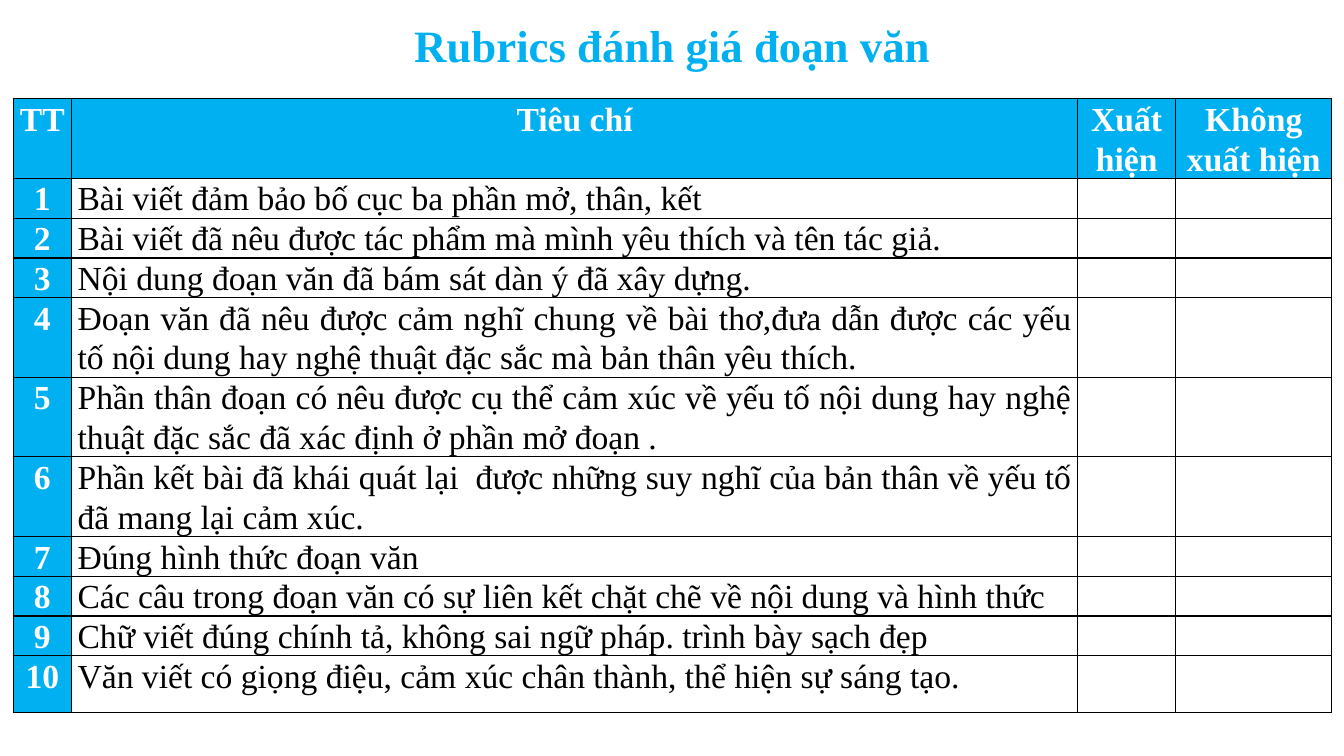
import lxml.etree
import pptx
import pptx.dml.color
import pptx.enum.text
import pptx.oxml.ns
import pptx.util

PX = 9144
THEME = {
    "font": "Times New Roman",
    "accent": "00B0F0",
    "light": "FFFFFF",
    "dark": "000000",
    "title_size": 32,
    "table_size": 24,
}
ALIGN = pptx.enum.text.PP_ALIGN


def style_paragraph(paragraph, size, color, bold):
    font = paragraph.font
    font.name = THEME["font"]
    font.size = pptx.util.Pt(size)
    font.bold = bold
    font.color.rgb = pptx.dml.color.RGBColor.from_string(THEME[color])


def add_borders(cell):
    properties = cell._tc.get_or_add_tcPr()
    for position, side in enumerate(("lnL", "lnR", "lnT", "lnB")):
        border = lxml.etree.Element(
            pptx.oxml.ns.qn("a:" + side), w=str(pptx.util.Pt(1))
        )
        fill = lxml.etree.SubElement(border, pptx.oxml.ns.qn("a:solidFill"))
        lxml.etree.SubElement(fill, pptx.oxml.ns.qn("a:srgbClr"), val=THEME["dark"])
        properties.insert(position, border)


HEADINGS = ["TT", "Tiêu chí", "Xuất hiện", "Không xuất hiện"]
CRITERIA = [
    "Bài viết đảm bảo bố cục ba phần mở, thân, kết",
    "Bài viết đã nêu được tác phẩm mà mình yêu thích và tên tác giả.",
    "Nội dung đoạn văn đã bám sát dàn ý đã xây dựng.",
    "Đoạn văn đã nêu được cảm nghĩ chung về bài thơ,đưa dẫn được các yếu tố nội dung hay nghệ thuật đặc sắc mà bản thân yêu thích.",
    "Phần thân đoạn có nêu được cụ thể cảm xúc về yếu tố nội dung hay nghệ thuật đặc sắc đã xác định ở phần mở đoạn .",
    "Phần kết bài đã khái quát lại  được những suy nghĩ của bản thân về yếu tố đã mang lại cảm xúc.",
    "Đúng hình thức đoạn văn",
    "Các câu trong đoạn văn có sự liên kết chặt chẽ về nội dung và hình thức",
    "Chữ viết đúng chính tả, không sai ngữ pháp. trình bày sạch đẹp",
    "Văn viết có giọng điệu, cảm xúc chân thành, thể hiện sự sáng tạo.",
]
COLUMN_WIDTHS = [58, 998, 97, 155]
ROW_HEIGHTS = [79] + [38] * 3 + [79] * 3 + [38] * 3 + [56]

deck = pptx.Presentation()
deck.slide_width = 1333 * PX
deck.slide_height = 750 * PX
slide = deck.slides.add_slide(deck.slide_layouts[6])

rubric = slide.shapes.add_table(
    len(ROW_HEIGHTS),
    len(COLUMN_WIDTHS),
    13 * PX,
    98 * PX,
    sum(COLUMN_WIDTHS) * PX,
    sum(ROW_HEIGHTS) * PX,
).table
rubric.first_row = False
rubric.horz_banding = False
for column, width in zip(rubric.columns, COLUMN_WIDTHS):
    column.width = width * PX
for row, height in zip(rubric.rows, ROW_HEIGHTS):
    row.height = height * PX

entries = [HEADINGS]
for number, criterion in enumerate(CRITERIA, 1):
    entries.append([str(number), criterion, "", ""])

for row_index, entry in enumerate(entries):
    for column_index, wording in enumerate(entry):
        cell = rubric.cell(row_index, column_index)
        cell.margin_left = cell.margin_right = 6 * PX
        cell.margin_top = cell.margin_bottom = 0
        is_label = row_index == 0 or column_index == 0
        if is_label:
            cell.fill.solid()
            cell.fill.fore_color.rgb = pptx.dml.color.RGBColor.from_string(
                THEME["accent"]
            )
        else:
            cell.fill.background()
        add_borders(cell)
        if wording:
            cell.text = wording
            paragraph = cell.text_frame.paragraphs[0]
            paragraph.alignment = ALIGN.CENTER if is_label else ALIGN.JUSTIFY
            paragraph.line_spacing = 1.07
            style_paragraph(
                paragraph,
                THEME["table_size"],
                "light" if is_label else "dark",
                is_label,
            )

title = slide.shapes.add_textbox(401 * PX, 12 * PX, 532 * PX, 64 * PX).text_frame
title.word_wrap = True
title.auto_size = pptx.enum.text.MSO_AUTO_SIZE.SHAPE_TO_FIT_TEXT
title.vertical_anchor = pptx.enum.text.MSO_ANCHOR.MIDDLE
title.text = "Rubrics đánh giá đoạn văn"
style_paragraph(title.paragraphs[0], THEME["title_size"], "accent", True)

deck.save("out.pptx")
